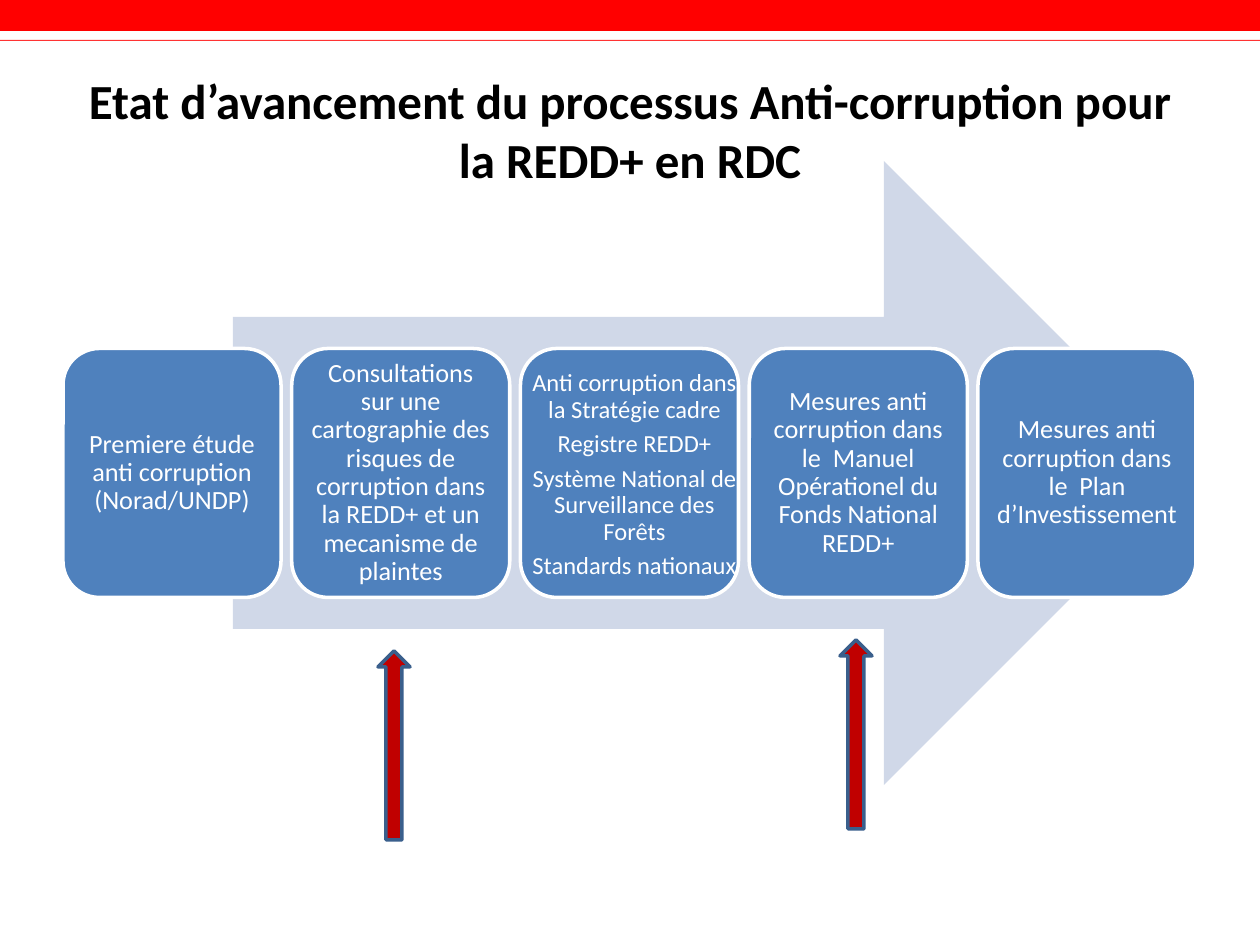
from pptx import Presentation
from pptx.dml.color import RGBColor
from pptx.enum.shapes import MSO_SHAPE
from pptx.enum.text import MSO_ANCHOR, PP_ALIGN
from pptx.util import Pt

PX = 914400 // 126
RECT = MSO_SHAPE.RECTANGLE
ROUNDED = MSO_SHAPE.ROUNDED_RECTANGLE
RIGHT_ARROW = MSO_SHAPE.RIGHT_ARROW
UP_ARROW = MSO_SHAPE.UP_ARROW
MIDDLE = MSO_ANCHOR.MIDDLE
CENTER = PP_ALIGN.CENTER

RED = RGBColor(0xFF, 0x00, 0x00)
LIGHT_RED = RGBColor(0xFF, 0x33, 0x33)
DARK_RED = RGBColor(0xC0, 0x00, 0x00)
NAVY = RGBColor(0x3A, 0x5F, 0x8C)
BLUE = RGBColor(0x4F, 0x81, 0xBD)
PALE_BLUE = RGBColor(0xD0, 0xD8, 0xE8)
WHITE = RGBColor(0xFF, 0xFF, 0xFF)
BLACK = RGBColor(0x00, 0x00, 0x00)

TITLE_FONT = {"name": "Calibri", "size": Pt(28), "bold": True}
STEP_FONT = {"name": "Calibri", "size": Pt(15)}
DETAIL_FONT = {"name": "Calibri", "size": Pt(14)}
STEP_SPACING = {"line_spacing": 0.9, "space_after": Pt(4.6)}

STEPS = [
    ["Premiere étude anti corruption (Norad/UNDP)"],
    ["Consultations sur une cartographie des risques de corruption dans "
     "la REDD+ et un mecanisme de plaintes"],
    ["Anti corruption dans la Stratégie cadre", "Registre REDD+",
     "Système National de Surveillance des Forêts", "Standards nationaux"],
    ["Mesures anti corruption dans le  Manuel Opérationel du "
     "Fonds National REDD+"],
    ["Mesures anti corruption dans le  Plan d’Investissement"],
]


def to_emu(box):
    return [round(length * PX) for length in box]


def add_block(slide, preset, box, fill, line=None):
    block = slide.shapes.add_shape(preset, *to_emu(box))
    block.shadow.inherit = False
    block.fill.solid()
    block.fill.fore_color.rgb = fill
    if line is None:
        block.line.fill.background()
    else:
        block.line.color.rgb = line
        block.line.width = Pt(2)
    return block


def write(holder, lines, font, color, margin, spacing):
    frame = holder.text_frame
    frame.word_wrap = True
    frame.vertical_anchor = MIDDLE
    for side in ("left", "top", "right", "bottom"):
        setattr(frame, f"margin_{side}", margin * PX)
    frame.text = "\n".join(lines)
    for paragraph in frame.paragraphs:
        paragraph.alignment = CENTER
        for name, value in spacing.items():
            setattr(paragraph, name, value)
        for name, value in font.items():
            setattr(paragraph.font, name, value)
        paragraph.font.color.rgb = color


def add_banner(slide, box):
    left, top, width, height = box
    add_block(slide, RECT, (left, top, width, height - 10), RED)
    add_block(slide, RECT, (left, top + height - 1, width, 1), LIGHT_RED)


def add_title(slide, box):
    title = slide.shapes.add_textbox(*to_emu(box))
    write(title, ["Etat d’avancement du processus Anti-corruption pour "
                  "la REDD+ en RDC"], TITLE_FONT, BLACK, 12, {})


def add_process(slide, box):
    left, top, width, height = box
    add_block(slide, RIGHT_ARROW, (left + 170, top, width - 170, height),
              PALE_BLUE)
    card_width, card_height = 218, 249
    pitch = (width - card_width) / (len(STEPS) - 1)
    card_top = top + (height - card_height) / 2
    for index, lines in enumerate(STEPS):
        card_left = left + index * pitch
        card = add_block(slide, ROUNDED,
                         (card_left, card_top, card_width, card_height),
                         BLUE, WHITE)
        if len(lines) == 1:
            write(card, lines, STEP_FONT, WHITE, 8, STEP_SPACING)
        else:
            details = slide.shapes.add_textbox(
                *to_emu((card_left + 3, card_top + 21, 222, 212)))
            write(details, lines, DETAIL_FONT, WHITE, 8, STEP_SPACING)


def add_markers(slide, box):
    left, top, width, height = box
    arrow_width, arrow_height = 32, 189
    for x, y in ((0, height - arrow_height), (width - arrow_width, 0)):
        add_block(slide, UP_ARROW,
                  (left + x, top + y, arrow_width, arrow_height),
                  DARK_RED, NAVY)


def main():
    presentation = Presentation()
    presentation.slide_width, presentation.slide_height = to_emu((1260, 945))
    slide = presentation.slides.add_slide(presentation.slide_layouts[6])
    add_banner(slide, (0, 0, 1260, 41))
    add_title(slide, (63, 63, 1134, 132))
    add_process(slide, (63, 161, 1133, 624))
    add_markers(slide, (378, 640, 494, 200))
    presentation.save("out.pptx")


if __name__ == "__main__":
    main()
